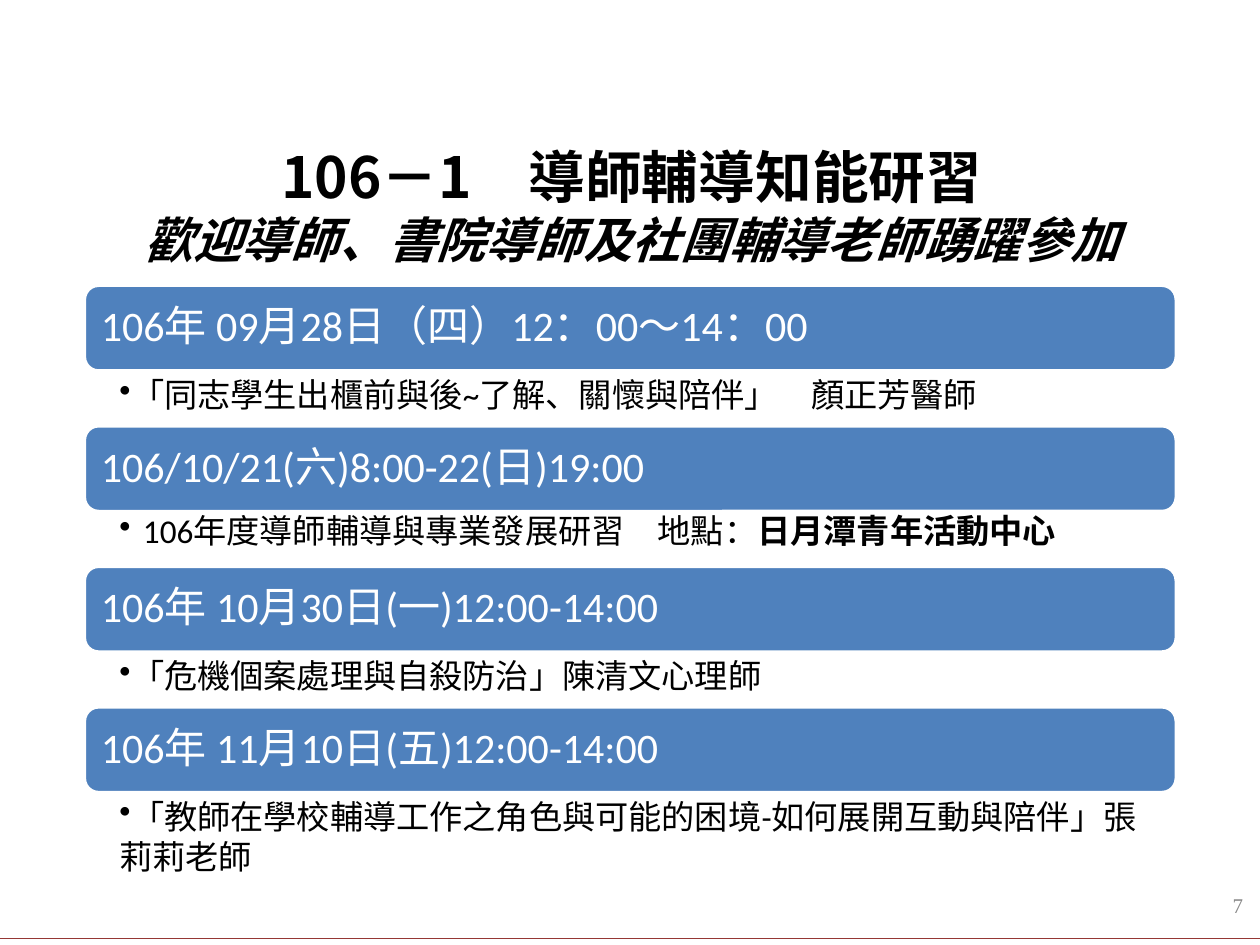
"""Build the slide that announces the tutor counselling workshops."""
from dataclasses import dataclass
from typing import Optional

from lxml import etree
from pptx import Presentation
from pptx.dml.color import RGBColor
from pptx.enum import shapes, text
from pptx.oxml import ns
from pptx.util import Pt

LEFT, WIDTH = 48.2, 624
FIRST_TOP, PITCH, BAR_HEIGHT = 163, 80.3, 49
INDENT = 13.5


@dataclass(frozen=True)
class Session:
    time: str
    topic: str
    place: str = ""
    hanging: bool = False
    topic_height: float = 31


SESSIONS = [
    Session("106年 09月28日（四）12：00～14：00", "「同志學生出櫃前與後~了解、關懷與陪伴」\u3000顏正芳醫師"),
    Session("106/10/21(六)8:00-22(日)19:00", "106年度導師輔導與專業發展研習\u3000地點：",
            place="日月潭青年活動中心", hanging=True),
    Session("106年 10月30日(一)12:00-14:00", "「危機個案處理與自殺防治」陳清文心理師"),
    Session("106年 11月10日(五)12:00-14:00",
            "「教師在學校輔導工作之角色與可能的困境-如何展開互動與陪伴」張莉莉老師",
            topic_height=55),
]


def paint(target, color: str) -> None:
    target.rgb = RGBColor.from_string(color)


def add_span(para, words: str, *, size: float, font: str = "Calibri", color: str = "000000",
             bold: bool = False, italic: bool = False) -> None:
    span = para.add_run()
    span.text = words
    span.font.size, span.font.name = Pt(size), font
    span.font.bold, span.font.italic = bold, italic
    paint(span.font.color, color)


def set_frame(box, left: float, top: float, right: float, bottom: float, anchor):
    frame = box.text_frame
    frame.word_wrap = True
    frame.auto_size = text.MSO_AUTO_SIZE.NONE
    frame.vertical_anchor = anchor
    frame.margin_left, frame.margin_top = Pt(left), Pt(top)
    frame.margin_right, frame.margin_bottom = Pt(right), Pt(bottom)
    return frame.paragraphs[0]


def add_bullet(para, indent: float) -> None:
    props = para._p.get_or_add_pPr()
    props.set("marL", str(Pt(indent)))
    props.set("indent", str(Pt(-indent)))
    etree.SubElement(props, ns.qn("a:buChar")).set("char", "•")


def add_title(page) -> None:
    title = page.shapes.title
    title.left, title.top, title.width, title.height = Pt(60), Pt(77), Pt(602), Pt(80)
    para = set_frame(title, 7.2, 3.6, 7.2, 3.6, text.MSO_ANCHOR.MIDDLE)
    para.alignment = text.PP_ALIGN.CENTER
    add_span(para, "106－1\u3000導師輔導知能研習", size=32.4, font="Noto Sans CJK SC", bold=True)
    para.add_line_break()
    add_span(para, "歡迎導師、書院導師及社團輔導老師踴躍參加", size=27.9,
             font="Times New Roman", bold=True, italic=True)


def add_bar(page, words: str, top: float) -> None:
    bar = page.shapes.add_shape(shapes.MSO_SHAPE.ROUNDED_RECTANGLE,
                                Pt(LEFT), Pt(top), Pt(WIDTH), Pt(BAR_HEIGHT))
    bar.shadow.inherit = False
    bar.fill.solid()
    paint(bar.fill.fore_color, "4F81BD")
    paint(bar.line.color, "FFFFFF")
    bar.line.width = Pt(2)
    para = set_frame(bar, 7.2, 7.2, 7.2, 7.2, text.MSO_ANCHOR.MIDDLE)
    para.alignment = text.PP_ALIGN.LEFT
    para.line_spacing = 0.9
    add_span(para, words, size=24, color="FFFFFF")


def add_topic(page, session: Session, top: float) -> None:
    box = page.shapes.add_textbox(Pt(LEFT), Pt(top), Pt(WIDTH), Pt(session.topic_height))
    para = set_frame(box, 20, 2, 13.5, 2, text.MSO_ANCHOR.TOP)
    add_bullet(para, INDENT if session.hanging else 0)
    spacing: Optional[float] = 0.9 if session.hanging else None
    para.line_spacing = spacing
    add_span(para, session.topic, size=19)
    if session.place:
        add_span(para, session.place, size=19, bold=True)


def add_footer(page) -> None:
    rule = page.shapes.add_connector(shapes.MSO_CONNECTOR.STRAIGHT,
                                     Pt(0), Pt(536.4), Pt(720), Pt(536.4))
    paint(rule.line.color, "953735")
    rule.line.width = Pt(0.75)
    etree.SubElement(rule._element.spPr, ns.qn("a:effectLst"))
    number = page.shapes.add_textbox(Pt(549.5), Pt(502.5), Pt(168), Pt(29))
    para = set_frame(number, 7.2, 3.6, 7.2, 3.6, text.MSO_ANCHOR.MIDDLE)
    para.alignment = text.PP_ALIGN.RIGHT
    add_span(para, "7", size=12, font="Times New Roman", color="898989")


def main() -> None:
    deck = Presentation()
    deck.slide_width, deck.slide_height = Pt(720), Pt(540)
    page = deck.slides.add_slide(deck.slide_layouts.get_by_name("Title Only"))
    add_title(page)
    for row, session in enumerate(SESSIONS):
        top = FIRST_TOP + row * PITCH
        add_bar(page, session.time, top)
        add_topic(page, session, top + BAR_HEIGHT)
    add_footer(page)
    deck.save("out.pptx")


if __name__ == "__main__":
    main()
